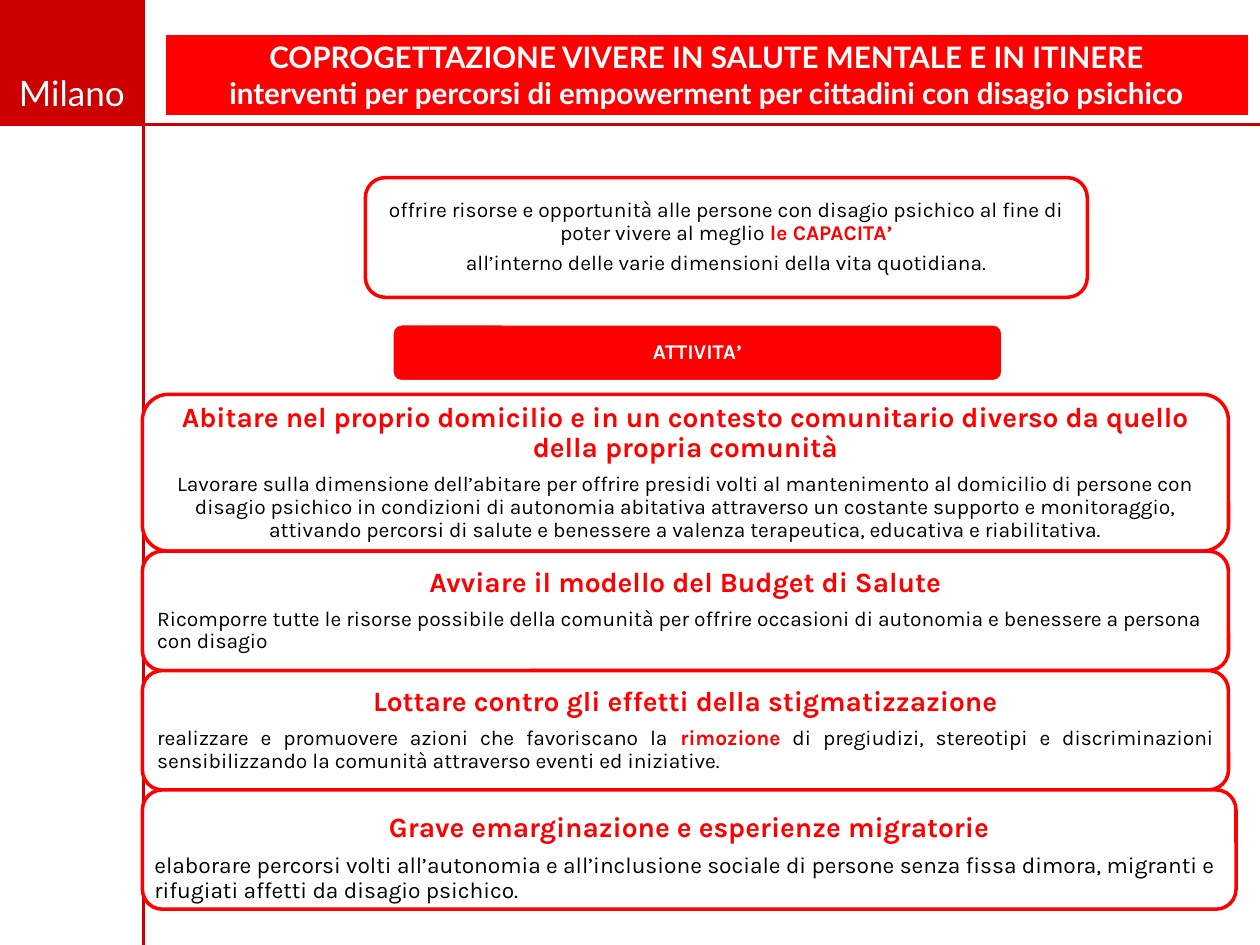
from pptx import Presentation
from pptx.dml.color import RGBColor
from pptx.enum.shapes import MSO_CONNECTOR, MSO_SHAPE
from pptx.enum.text import MSO_ANCHOR as Anchor, PP_ALIGN as Align
from pptx.oxml.ns import qn
from pptx.util import Inches, Pt
from lxml.etree import SubElement

WIDTH, HEIGHT = Inches(10), Inches(7.5)
RED = RGBColor(0xFF, 0x00, 0x00)
DARK_RED = RGBColor(0xCC, 0x00, 0x00)
WHITE = RGBColor(0xFF, 0xFF, 0xFF)
BLACK = RGBColor(0x00, 0x00, 0x00)

# Layout in percent of the slide's width and height
RAIL_X, RULE_Y = 11.4, 13.2
STACK_X, STACK_Y, STACK_W = 11.3, 41.73, 86.2
TALL, LOW = 16.6, 12.63

# Each card: height, extra width, inset, extra top inset, heading,
# body alignment, body size, body runs as (text, is_key_word)
ACTIVITIES = [
    (TALL, 0, 0.07, 0,
     "Abitare nel proprio domicilio e in un contesto comunitario diverso da "
     "quello della propria comunità",
     Align.CENTER, 12,
     [("Lavorare sulla dimensione dell’abitare per offrire presidi volti al "
       "mantenimento al domicilio di persone con disagio psichico in condizioni "
       "di autonomia abitativa attraverso un costante supporto e monitoraggio, "
       "attivando percorsi di salute e benessere a valenza terapeutica, "
       "educativa e riabilitativa.", False)]),
    (LOW, 0, 0.07, 0, "Avviare il modello del Budget di Salute",
     Align.LEFT, 12,
     [("Ricomporre tutte le risorse possibile della comunità per offrire "
       "occasioni di autonomia e benessere a persona con disagio", False)]),
    (LOW, 0, 0.07, 0, "Lottare contro gli effetti della stigmatizzazione",
     Align.JUSTIFY, 12,
     [("realizzare e promuovere azioni che favoriscano la ", False),
      ("rimozione", True),
      (" di pregiudizi, stereotipi e discriminazioni sensibilizzando la "
       "comunità attraverso eventi ed iniziative.", False)]),
    (LOW, 0.6, 0.05, 0.14, "Grave emarginazione e esperienze migratorie",
     Align.LEFT, 13,
     [("elaborare percorsi volti all’autonomia e all’inclusione sociale di "
       "persone senza fissa dimora, migranti e rifugiati affetti da disagio "
       "psichico.", False)]),
]


def across(share):
    return round(WIDTH * share / 100)


def down(share):
    return round(HEIGHT * share / 100)


def place(left, top, width, height):
    return across(left), down(top), across(width), down(height)


def add_panel(slide, preset, area, fill, outline=None):
    panel = slide.shapes.add_shape(preset, *place(*area))
    panel.shadow.inherit = False
    panel.fill.solid()
    panel.fill.fore_color.rgb = fill
    if outline is None:
        panel.line.fill.background()
    else:
        panel.line.color.rgb = outline
        panel.line.width = Pt(2)
    return panel


def add_rule(slide, start, end):
    rule = slide.shapes.add_connector(
        MSO_CONNECTOR.STRAIGHT, across(start[0]), down(start[1]),
        across(end[0]), down(end[1]))
    rule.line.color.rgb = DARK_RED
    rule.line.width = Pt(1.5)
    SubElement(rule._element.spPr, qn("a:effectLst"))


def set_frame(shape, anchor, inset=None, extra_top=0):
    frame = shape.text_frame
    frame.word_wrap = True
    frame.vertical_anchor = anchor
    if inset is not None:
        frame.margin_left = frame.margin_right = frame.margin_bottom = Inches(inset)
        frame.margin_top = Inches(inset + extra_top)
    return frame


def write(paragraph, runs, size, color, font="Karla", bold=False,
          align=Align.CENTER):
    """Write runs of (text, is_key_word); key words are bold red."""
    paragraph.alignment = align
    paragraph.font.name = font
    paragraph.font.size = Pt(size)
    paragraph.font.bold = bold
    paragraph.font.color.rgb = color
    if font == "Karla":
        paragraph.line_spacing = 0.9
        paragraph.space_after = Pt(round(0.35 * size, 1))
    for text, is_key_word in runs:
        run = paragraph.add_run()
        run.text = text
        if is_key_word:
            run.font.bold = True
            run.font.color.rgb = RED
        else:
            run.font.color.rgb = color


def add_header(slide):
    # City block with its rules
    add_panel(slide, MSO_SHAPE.RECTANGLE, (0, 0, RAIL_X, RULE_Y), DARK_RED)
    add_rule(slide, (0, RULE_Y), (100, RULE_Y))
    add_rule(slide, (RAIL_X, 100), (RAIL_X, 0))
    city = slide.shapes.add_textbox(*place(0, 6.93, RAIL_X, 5.73))
    frame = set_frame(city, Anchor.TOP)
    write(frame.paragraphs[0], [("Milano", False)], 20, WHITE, "Lato")

    # Title banner
    banner = add_panel(slide, MSO_SHAPE.RECTANGLE, (13, 3.47, 86.2, 8.93), RED, WHITE)
    frame = set_frame(banner, Anchor.TOP)
    title = "COPROGETTAZIONE VIVERE IN SALUTE MENTALE E IN ITINERE"
    subtitle = ("interventi per percorsi di empowerment per cittadini "
                "con disagio psichico")
    write(frame.paragraphs[0], [(title, False)], 16.9, WHITE, "Lato", True)
    write(frame.add_paragraph(), [(subtitle, False)], 16.9, WHITE, "Lato", True)


def add_goal(slide):
    goal = add_panel(slide, MSO_SHAPE.ROUNDED_RECTANGLE,
                     (29, 18.8, 57.3, 12.67), WHITE, RED)
    frame = set_frame(goal, Anchor.MIDDLE, 0.05)
    write(frame.paragraphs[0],
          [("offrire risorse e opportunità alle persone con disagio psichico "
            "al fine di poter vivere al meglio ", False),
           ("le CAPACITA’", True)], 12, BLACK)
    write(frame.add_paragraph(),
          [("all’interno delle varie dimensioni della vita quotidiana.", False)],
          12, BLACK)


def add_activities(slide):
    label = add_panel(slide, MSO_SHAPE.ROUNDED_RECTANGLE,
                      (31.1, 34.27, 48.5, 6.13), RED, WHITE)
    frame = set_frame(label, Anchor.MIDDLE, 0.05)
    write(frame.paragraphs[0], [("ATTIVITA’", False)], 12, WHITE, bold=True)

    # Cards stacked edge to edge
    top = STACK_Y
    for height, extra_width, inset, extra_top, heading, align, size, body in ACTIVITIES:
        card = add_panel(slide, MSO_SHAPE.ROUNDED_RECTANGLE,
                         (STACK_X, top, STACK_W + extra_width, height), WHITE, RED)
        frame = set_frame(card, Anchor.MIDDLE, inset, extra_top)
        write(frame.paragraphs[0], [(heading, False)], 16, RED, bold=True)
        write(frame.add_paragraph(), body, size, BLACK, align=align)
        top += height


def main():
    deck = Presentation()
    deck.slide_width, deck.slide_height = WIDTH, HEIGHT
    slide = deck.slides.add_slide(deck.slide_layouts[6])
    add_header(slide)
    add_goal(slide)
    add_activities(slide)
    deck.save("out.pptx")


if __name__ == "__main__":
    main()
